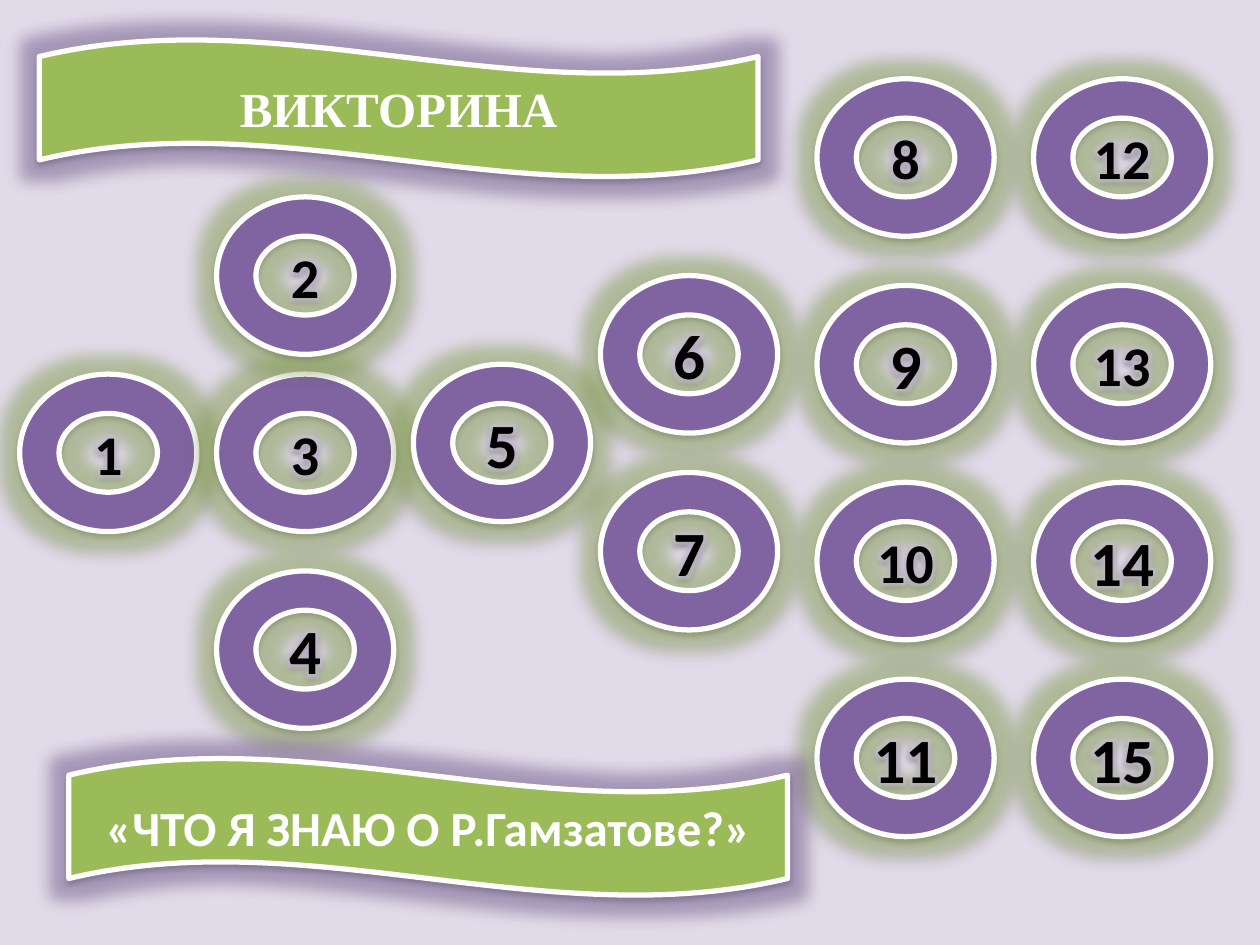
from dataclasses import dataclass

from lxml import etree
from pptx import Presentation
from pptx import util as u
from pptx.dml.color import RGBColor
from pptx.enum import shapes, text
from pptx.oxml import ns


@dataclass(frozen=True)
class Theme:
    background: str = "E1DAE9"
    purple: str = "8064A2"
    green: str = "9BBB59"
    halo: str = "CCC1DA"
    white: str = "FFFFFF"
    black: str = "000000"
    body_font: str = "Calibri"
    title_font: str = "Times New Roman"
    banner_size: int = 28
    small_number: int = 32
    large_number: int = 36
    outline: int = 3


THEME = Theme()
SLIDE_WIDTH, SLIDE_HEIGHT = u.Inches(10), u.Inches(7.5)
CELL = SLIDE_WIDTH / 128  # the grid has 128 columns and 96 rows

# Ring number: column and row of its top left corner, from back to front
RING_COLUMNS, RING_ROWS = 18, 16
RINGS = {
    1: (2, 38), 6: (61, 28),
    11: (83, 69), 10: (83, 49), 9: (83, 29),
    15: (105, 69), 14: (105, 49), 13: (105, 29),
    8: (83, 8), 12: (105, 8),
    3: (22, 38), 5: (42, 37), 7: (61, 48), 2: (22, 20), 4: (22, 58),
}
SMALL_NUMBERS = {1, 2, 3, 8, 10, 12, 13}


def add_effect(effects, name, color, alpha, **attributes):
    effect = etree.SubElement(effects, ns.qn(f"a:{name}"), attributes)
    color_node = etree.SubElement(effect, ns.qn("a:srgbClr"), val=color)
    etree.SubElement(color_node, ns.qn("a:alpha"), val=str(alpha * 1000))


def add_glowing_shape(slide, kind, box, fill, glow):
    """Place an outlined shape with a glow and a soft shadow; box is in grid cells."""
    shape = slide.shapes.add_shape(kind, *(round(cells * CELL) for cells in box))
    shape.fill.solid()
    shape.fill.fore_color.rgb = RGBColor.from_string(fill)
    shape.line.color.rgb = RGBColor.from_string(THEME.white)
    shape.line.width = u.Pt(THEME.outline)
    shape.shadow.inherit = False
    effects = shape._element.spPr.find(ns.qn("a:effectLst"))
    add_effect(effects, "glow", glow, 40, rad=str(u.Pt(18)))
    add_effect(effects, "outerShdw", THEME.black, 38, blurRad="40000",
               dist="20000", dir="5400000", rotWithShape="0")
    return shape


def write_label(shape, label, font, size, color):
    frame = shape.text_frame
    frame.word_wrap = True
    frame.vertical_anchor = text.MSO_ANCHOR.MIDDLE
    paragraph = frame.paragraphs[0]
    paragraph.alignment = text.PP_ALIGN.CENTER
    run = paragraph.add_run()
    run.text = label
    paragraph.font.name = font
    paragraph.font.size = u.Pt(size)
    paragraph.font.bold = True
    paragraph.font.color.rgb = RGBColor.from_string(color)
    return run


def add_ring(slide, number, box):
    ring = add_glowing_shape(slide, shapes.MSO_SHAPE.DONUT, box, THEME.purple, THEME.green)
    size = THEME.small_number if number in SMALL_NUMBERS else THEME.large_number
    run = write_label(ring, str(number), THEME.body_font, size, THEME.black)
    # Pale halo and shadow behind the digits
    effects = etree.SubElement(run._r.get_or_add_rPr(), ns.qn("a:effectLst"))
    add_effect(effects, "glow", THEME.halo, 60, rad=str(u.Pt(8)))
    add_effect(effects, "outerShdw", THEME.black, 40, blurRad="50800",
               dist="38100", dir="2700000")


def add_banner(slide, label, font, box):
    banner = add_glowing_shape(slide, shapes.MSO_SHAPE.WAVE, box, THEME.green, THEME.purple)
    write_label(banner, label, font, THEME.banner_size, THEME.white)


def add_quiz_board(slide):
    # Numbered rings
    for number, corner in RINGS.items():
        add_ring(slide, number, (*corner, RING_COLUMNS, RING_ROWS))
    # Title and topic banners
    add_banner(slide, "ВИКТОРИНА", THEME.title_font, (4, 4, 73, 14))
    add_banner(slide, "«ЧТО Я ЗНАЮ О Р.Гамзатове?»", THEME.body_font, (7, 77, 73, 14))


def main():
    presentation = Presentation()
    presentation.slide_width, presentation.slide_height = SLIDE_WIDTH, SLIDE_HEIGHT
    slide = presentation.slides.add_slide(presentation.slide_layouts[6])
    slide.background.fill.solid()
    slide.background.fill.fore_color.rgb = RGBColor.from_string(THEME.background)
    add_quiz_board(slide)
    presentation.save("out.pptx")


if __name__ == "__main__":
    main()
